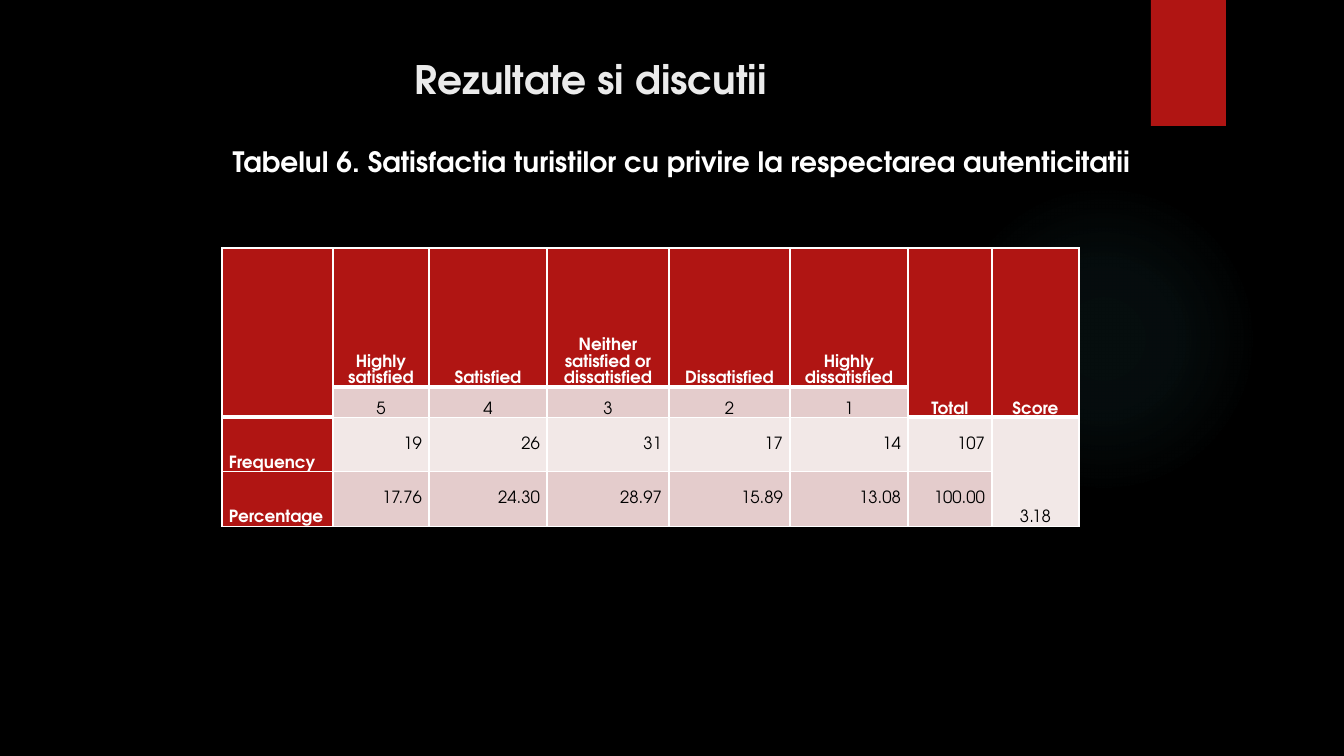
import pptx
import pptx.util
import pptx.dml.color
import pptx.enum.shapes
import pptx.enum.text
import pptx.oxml
import pptx.oxml.ns

RGB = pptx.dml.color.RGBColor
BLACK = RGB(0x00, 0x00, 0x00)
WHITE = RGB(0xFF, 0xFF, 0xFF)
PALE = RGB(0xEB, 0xEB, 0xEB)
RED = RGB(0xB0, 0x15, 0x13)
ROSE = RGB(0xE4, 0xCC, 0xCC)
BLUSH = RGB(0xF2, 0xE8, 0xE7)
TEAL = RGB(0x50, 0xB9, 0xC1)

ALIGN = pptx.enum.text.PP_ALIGN
ANCHOR = pptx.enum.text.MSO_ANCHOR
SHAPE = pptx.enum.shapes.MSO_SHAPE
NS = pptx.oxml.ns.nsdecls("a")
FONT = "TeX Gyre Adventor"
PX = 914400 / 100.8


def px(*nums):
    """Turn pixel lengths into a list of EMU lengths."""
    return [pptx.util.Emu(round(n * PX)) for n in nums]


def write(frame, text, size=12, color=WHITE, bold=True, align=ALIGN.CENTER, space=None):
    frame.word_wrap = True
    par = frame.paragraphs[0]
    par.alignment = align
    par.line_spacing = space
    run = par.add_run()
    run.text = text
    run.font.name = FONT
    run.font.size = pptx.util.Pt(size)
    run.font.bold = bold
    run.font.color.rgb = color


prs = pptx.Presentation()
prs.slide_width, prs.slide_height = px(1344, 756)
slide = prs.slides.add_slide(prs.slide_layouts[5])
slide.background.fill.solid()
slide.background.fill.fore_color.rgb = BLACK

# Backdrop: soft glow and red tab
glow = slide.shapes.add_shape(SHAPE.OVAL, *px(949, 184, 310, 310))
glow.shadow.inherit = False
glow.line.fill.background()
stops = "".join(
    f'<a:gs pos="{pos}000"><a:srgbClr val="{TEAL}"><a:alpha val="{alpha}000"/></a:srgbClr></a:gs>'
    for pos, alpha in ((0, 7), (36, 6), (69, 0), (100, 0)))
grad = pptx.oxml.parse_xml(
    f'<a:gradFill {NS} rotWithShape="1"><a:gsLst>{stops}</a:gsLst><a:path path="circle">'
    '<a:fillToRect l="50000" t="50000" r="50000" b="50000"/></a:path></a:gradFill>')
glow.element.spPr.find(pptx.oxml.ns.qn("a:prstGeom")).addnext(grad)

tab = slide.shapes.add_shape(SHAPE.RECTANGLE, *px(1151, 0, 75, 126))
tab.shadow.inherit = False
tab.fill.solid()
tab.fill.fore_color.rgb = RED
tab.line.fill.background()

# Title and table caption
title = slide.shapes.title
title.left, title.top, title.width, title.height = px(72, 50, 1037, 71)
title.text_frame.vertical_anchor = ANCHOR.TOP
write(title.text_frame, "Rezultate si discutii", size=28, color=PALE)

note = slide.shapes.add_textbox(*px(109, 140, 1145, 46))
write(note.text_frame,
      "Tabelul 6. Satisfactia turistilor cu privire la respectarea autenticitatii", size=20)

# Satisfaction table; None marks a cell with no text of its own
ROWS = [
    [None, "Highly satisfied", "Satisfied", "Neither satisfied or dissatisfied",
     "Dissatisfied", "Highly dissatisfied", "Total", "Score"],
    [None, "5", "4", "3", "2", "1", None, None],
    ["Frequency", "19", "26", "31", "17", "14", "107", "3.18"],
    ["Percentage", "17.76", "24.30", "28.97", "15.89", "13.08", "100.00", None],
]
WIDE = [111, 96, 118, 122, 121, 118, 84, 87]
HIGH = [139, 27, 54, 55]
TALL = (0, 6, 7)
SCORE = 7

table = slide.shapes.add_table(
    len(ROWS), len(WIDE), *px(222, 248, sum(WIDE), sum(HIGH))).table
for col, wide in zip(table.columns, px(*WIDE)):
    col.width = wide
for row, high in zip(table.rows, px(*HIGH)):
    row.height = high

for r, row in enumerate(ROWS):
    for c, text in enumerate(row):
        cell = table.cell(r, c)
        head = r == 0 or c == 0 or (r == 1 and c in TALL)
        score = c == SCORE and r > 1
        mid = r > 1 and not head and not score

        # The rule under the header is thick, below its one or two rows
        above = 3 if r == 1 or (r == 2 and c in TALL) else 1
        below = 3 if r == 0 or (r == 1 and c in TALL) else 1
        props = cell._tc.get_or_add_tcPr()
        for side, width in zip("LRTB", (1, 1, above, below)):
            props.append(pptx.oxml.parse_xml(
                f'<a:ln{side} {NS} w="{width * 12700}"><a:solidFill>'
                f'<a:srgbClr val="{WHITE}"/></a:solidFill></a:ln{side}>'))

        cell.fill.solid()
        cell.fill.fore_color.rgb = (
            RED if head else BLUSH if r == 2 or score else ROSE)
        cell.margin_left, cell.margin_right, cell.margin_top, cell.margin_bottom = px(7, 7, 0, 0)
        cell.vertical_anchor = ANCHOR.MIDDLE if mid else ANCHOR.BOTTOM
        if text:
            side = ALIGN.RIGHT if mid else ALIGN.LEFT if c == 0 else ALIGN.CENTER
            write(cell.text_frame, text, color=WHITE if head else BLACK,
                  bold=head, align=side, space=1.07)

for c in TALL:
    table.cell(0, c).merge(table.cell(1, c))
table.cell(2, SCORE).merge(table.cell(3, SCORE))

prs.save("out.pptx")
